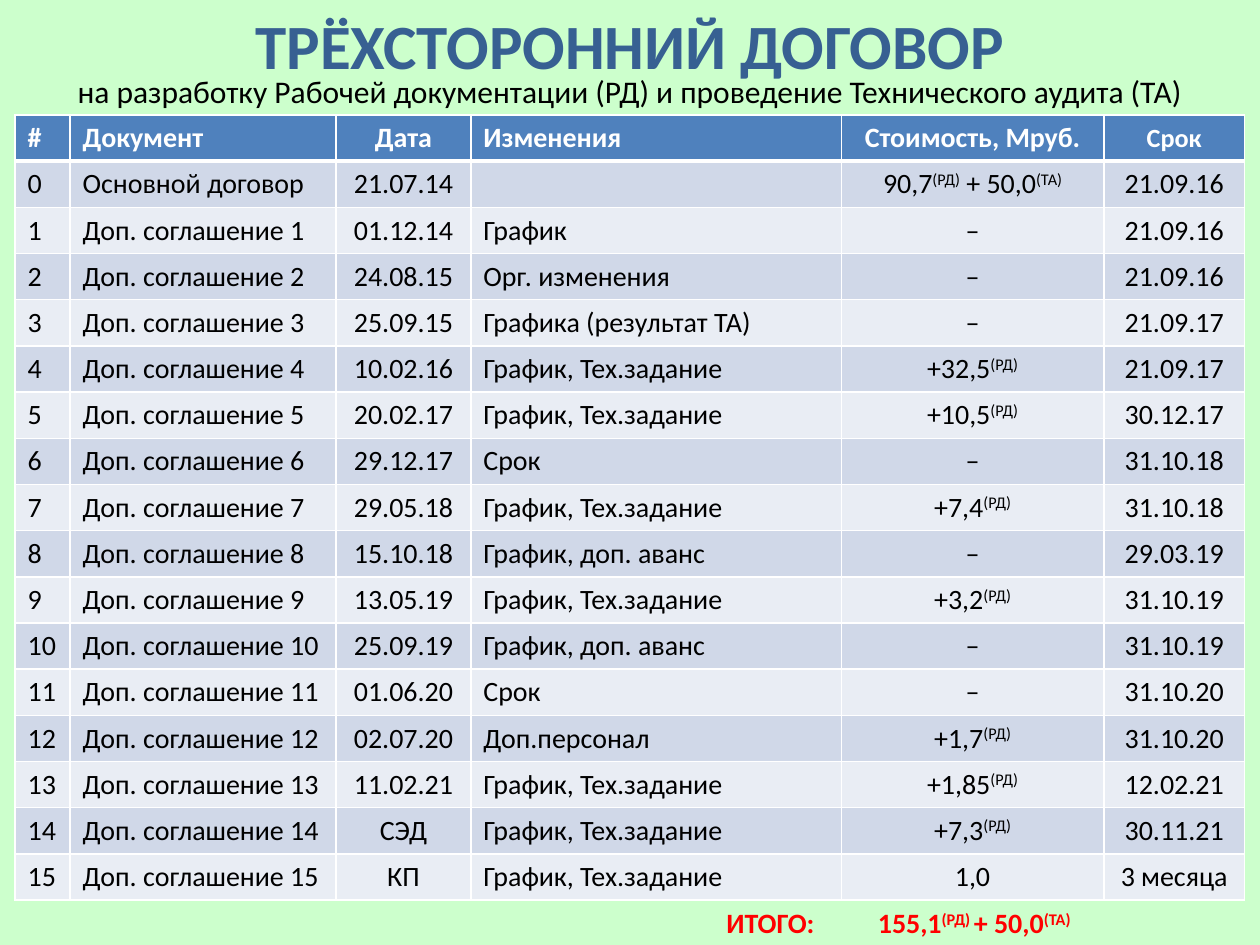
from dataclasses import dataclass

from lxml import etree
from pptx import Presentation
from pptx import util as u
from pptx.dml.color import RGBColor
from pptx.enum import text
from pptx.oxml import ns

LEFT, CENTER = text.PP_ALIGN.LEFT, text.PP_ALIGN.CENTER


@dataclass(frozen=True)
class Theme:
    font: str = "Calibri"
    background: str = "CCFFCC"
    title: str = "376092"
    ink: str = "000000"
    header: str = "4F81BD"
    bands: tuple = ("D0D8E8", "E9EDF4")
    white: str = "FFFFFF"
    total: str = "FF0000"
    title_size: int = 36
    subtitle_size: int = 18
    body_size: int = 16
    term_size: int = 15


class SlideBuilder:
    def __init__(self, deck, theme):
        self.theme = theme
        self.slide = deck.slides.add_slide(deck.slide_layouts[6])
        backdrop = self.slide.background.fill
        backdrop.solid()
        backdrop.fore_color.rgb = RGBColor.from_string(theme.background)

    def fill_text(self, frame, content, size, color, bold=False, align=LEFT):
        """Fill a text frame; parts between ^ marks are superscript."""
        paragraph = frame.paragraphs[0]
        paragraph.alignment = align
        for order, part in enumerate(content.split("^")):
            if not part:
                continue
            run = paragraph.add_run()
            run.text = part
            run.font.name = self.theme.font
            run.font.size = u.Pt(size)
            run.font.bold = bold
            run.font.color.rgb = RGBColor.from_string(color)
            if order % 2:
                run.font._element.set("baseline", "30000")
        if not content:
            # Keeps an empty cell from growing its row
            paragraph._p.get_or_add_endParaRPr().set("sz", str(size * 100))

    def label(self, left, top, width, height, content, size, color,
              bold=False, align=LEFT, tab=None):
        box = self.slide.shapes.add_textbox(
            u.Pt(left), u.Pt(top), u.Pt(width), u.Pt(height))
        frame = box.text_frame
        frame.word_wrap = True
        if tab:
            properties = frame.paragraphs[0]._p.get_or_add_pPr()
            stops = etree.SubElement(properties, ns.qn("a:tabLst"))
            etree.SubElement(stops, ns.qn("a:tab"),
                             pos=str(u.Pt(tab)), algn="l")
        self.fill_text(frame, content, size, color, bold, align)

    def borders(self, cell, **widths):
        properties = cell._tc.get_or_add_tcPr()
        for side in "LRTB":
            line = etree.SubElement(properties, ns.qn(f"a:ln{side}"),
                                    w=str(u.Pt(widths.get(side, 1))))
            fill = etree.SubElement(line, ns.qn("a:solidFill"))
            etree.SubElement(fill, ns.qn("a:srgbClr"), val=self.theme.white)

    def table(self, left, top, row_height, widths, aligns, header, rows):
        theme = self.theme
        grid = self.slide.shapes.add_table(
            len(rows) + 1, len(widths), u.Pt(left), u.Pt(top),
            u.Pt(sum(widths)), u.Pt(row_height * (len(rows) + 1))).table
        for column, width in zip(grid.columns, widths):
            column.width = u.Pt(width)
        for r, values in enumerate([header, *rows]):
            grid.rows[r].height = u.Pt(row_height)
            is_header = r == 0
            for c, value in enumerate(values):
                cell = grid.cell(r, c)
                cell.margin_top = cell.margin_bottom = u.Pt(3)
                cell.vertical_anchor = text.MSO_ANCHOR.MIDDLE
                self.borders(cell, B=3 if is_header else 1,
                             T=3 if r == 1 else 1)
                cell.fill.solid()
                cell.fill.fore_color.rgb = RGBColor.from_string(
                    theme.header if is_header else theme.bands[(r - 1) % 2])
                small = is_header and c == len(widths) - 1
                self.fill_text(cell.text_frame, value,
                               theme.term_size if small else theme.body_size,
                               theme.white if is_header else theme.ink,
                               is_header, aligns[c])


HEADER = ["#", "Документ", "Дата", "Изменения", "Стоимость, Мруб.", "Срок"]
SCHEDULE_AND_TASK = "График, Тех.задание"

# Date, changes, cost, term; the first entry is the main contract
AGREEMENTS = [
    ("21.07.14", "", "90,7^(РД)^ + 50,0^(ТА)^", "21.09.16"),
    ("01.12.14", "График", "–", "21.09.16"),
    ("24.08.15", "Орг. изменения", "–", "21.09.16"),
    ("25.09.15", "Графика (результат ТА)", "–", "21.09.17"),
    ("10.02.16", SCHEDULE_AND_TASK, "+32,5^(РД)^", "21.09.17"),
    ("20.02.17", SCHEDULE_AND_TASK, "+10,5^(РД)^", "30.12.17"),
    ("29.12.17", "Срок", "–", "31.10.18"),
    ("29.05.18", SCHEDULE_AND_TASK, "+7,4^(РД)^", "31.10.18"),
    ("15.10.18", "График, доп. аванс", "–", "29.03.19"),
    ("13.05.19", SCHEDULE_AND_TASK, "+3,2^(РД)^", "31.10.19"),
    ("25.09.19", "График, доп. аванс", "–", "31.10.19"),
    ("01.06.20", "Срок", "–", "31.10.20"),
    ("02.07.20", "Доп.персонал", "+1,7^(РД)^", "31.10.20"),
    ("11.02.21", SCHEDULE_AND_TASK, "+1,85^(РД)^", "12.02.21"),
    ("СЭД", SCHEDULE_AND_TASK, "+7,3^(РД)^", "30.11.21"),
    ("КП", SCHEDULE_AND_TASK, "1,0", "3 месяца"),
]


def main():
    deck = Presentation()
    deck.slide_width, deck.slide_height = u.Pt(720), u.Pt(540)
    theme = Theme()
    page = SlideBuilder(deck, theme)

    # Heading
    page.label(0, 0, 720, 51, "ТРЁХСТОРОННИЙ ДОГОВОР",
               theme.title_size, theme.title, bold=True, align=CENTER)
    page.label(0, 37.5, 720, 29,
               "на разработку Рабочей документации (РД) и проведение "
               "Технического аудита (ТА)",
               theme.subtitle_size, theme.ink, align=CENTER)

    # Contract and its supplementary agreements
    rows = [
        (str(number),
         f"Доп. соглашение {number}" if number else "Основной договор",
         *details)
        for number, details in enumerate(AGREEMENTS)
    ]
    page.table(8.6, 65.7, 26.4, [31.5, 152, 77, 211.7, 150, 80.5],
               [LEFT, LEFT, CENTER, LEFT, CENTER, CENTER], HEADER, rows)

    # Total
    page.label(408, 514, 296, 26.6, "ИТОГО:\t155,1^(РД) ^+ 50,0^(ТА)^",
               theme.body_size, theme.total, bold=True, tab=86.6)

    deck.save("out.pptx")


if __name__ == "__main__":
    main()
